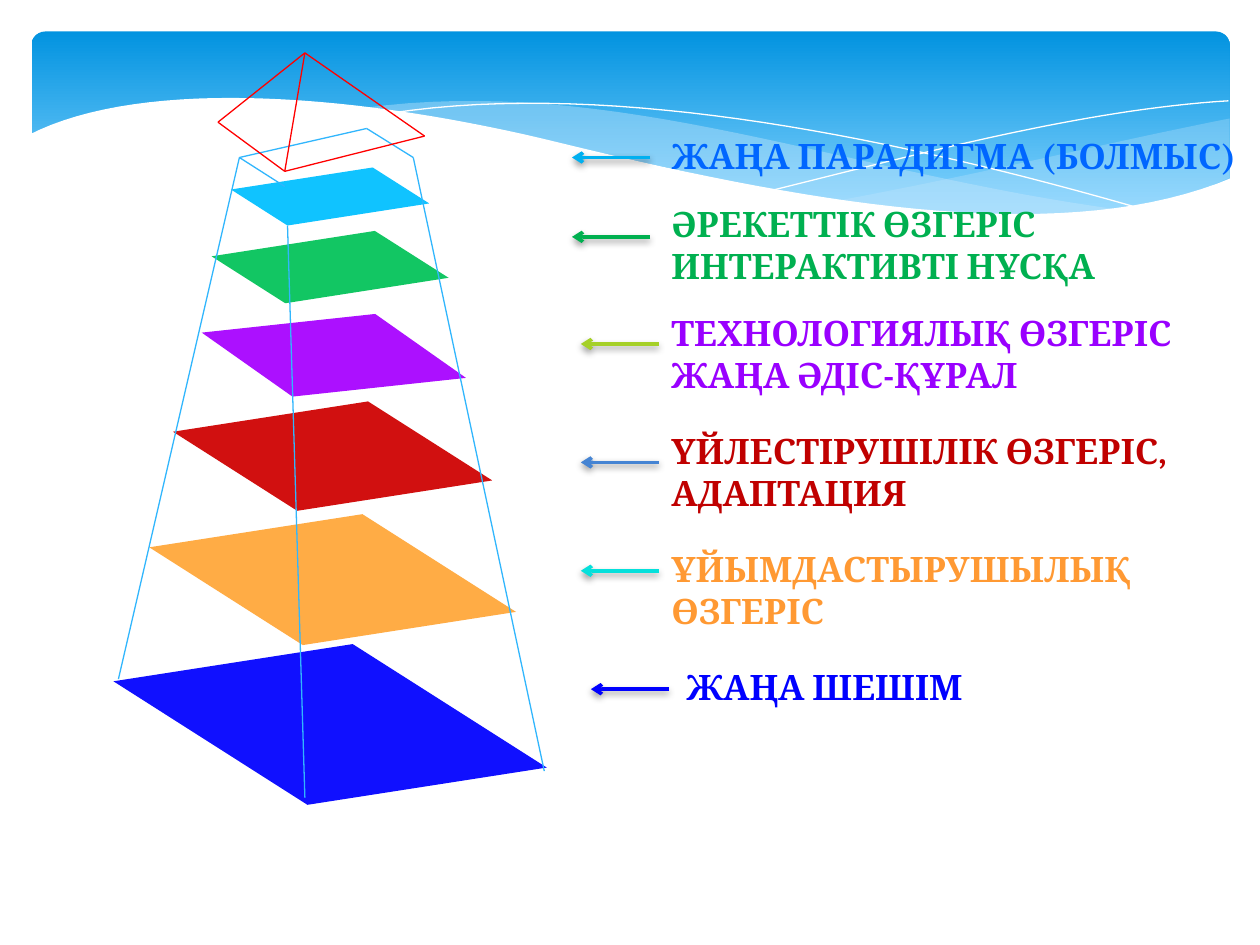
from dataclasses import dataclass
from math import cos, radians, sin

from lxml.etree import SubElement
from pptx import Presentation
from pptx.dml.color import RGBColor
from pptx.enum.shapes import MSO_CONNECTOR, MSO_SHAPE
from pptx.enum.text import PP_ALIGN
from pptx.oxml.ns import qn
from pptx.util import Inches, Pt

ACROSS = (0.9, -0.14)
DEPTH = (0.44, 0.28)
LINE_HEIGHT = 0.33
LABEL_PADDING = 0.11
ARROW_LENGTH = 0.62


@dataclass
class Level:
    """One level of change: its plane in the pyramid, its label and its arrow."""
    text: str
    text_color: str
    label_left: float
    label_top: float
    label_width: float
    arrow_color: str
    arrow_left: float
    arrow_top: float
    plane_color: str
    plane_center: tuple
    plane_width: float
    plane_depth: float
    plane_turn: float = 0


LEVELS = [
    Level("ЖАҢА ПАРАДИГМА (БОЛМЫС)", "0066FF", 0, 0, 4.86,
          "00B0F0", 0.02, 0.23, "10C3FF", (1.72, 1.14), 1.25, 1.02),
    Level("ӘРЕКЕТТІК ӨЗГЕРІС\nИНТЕРАКТИВТІ НҰСҚА", "00B050", 0.09, 0.54, 3.66,
          "00B050", 0.02, 0.86, "12C663", (1.72, 1.7), 1.44, 1.33),
    Level("ТЕХНОЛОГИЯЛЫҚ ӨЗГЕРІС\nЖАҢА ӘДІС-ҚҰРАЛ", "9900FF", 0.09, 1.4, 4.3,
          "A5D028", 0.09, 1.71, "AC10FF", (1.75, 2.4), 1.52, 1.69, 2.7),
    Level("ҮЙЛЕСТІРУШІЛІК ӨЗГЕРІС,\nАДАПТАЦИЯ", "C00000", 0.09, 2.34, 4.25,
          "4584D3", 0.09, 2.65, "D11010", (1.74, 3.2), 1.72, 2.24),
    Level("ҰЙЫМДАСТЫРУШЫЛЫҚ\nӨЗГЕРІС", "FF9933", 0.09, 3.28, 3.96,
          "05E0DB", 0.09, 3.51, "FFAC45", (1.74, 4.18), 1.88, 2.77),
    Level("ЖАҢА ШЕШІМ", "0000FF", 0.17, 4.21, 2.47,
          "0000FF", 0.17, 4.45, "1010FF", (1.72, 5.33), 2.11, 3.5),
]


def color(hex_code):
    """Turn a hex string into a colour."""
    return RGBColor.from_string(hex_code)


def bezier(start, pull_start, pull_end, end, steps=32):
    """Return points along a cubic curve."""
    return [tuple((1 - t) ** 3 * a + 3 * (1 - t) ** 2 * t * b + 3 * (1 - t) * t ** 2 * c + t ** 3 * d
                  for a, b, c, d in zip(start, pull_start, pull_end, end))
            for t in (step / steps for step in range(steps + 1))]


def add_outline(slide, origin, points, fill=None, opacity=100, line=None):
    """Draw a filled polygon, or an open path when there is no fill."""
    corners = [(Inches(origin[0] + x), Inches(origin[1] + y)) for x, y in points]
    builder = slide.shapes.build_freeform(*corners[0])
    builder.add_line_segments(corners[1:], close=fill is not None)
    outline = builder.convert_to_shape()
    outline.shadow.inherit = False
    if fill:
        outline.fill.solid()
        outline.fill.fore_color.rgb = color(fill)
        tint = outline.fill._xPr.find(qn("a:solidFill"))[0]
        SubElement(tint, qn("a:alpha"), val=str(opacity * 1000))
    else:
        outline.fill.background()
    if line:
        outline.line.color.rgb = color(line)
        outline.line.width = Pt(0)
    else:
        outline.line.fill.background()


def add_edge(slide, origin, start, end, hex_code, width=0.75):
    """Draw a straight line and return it with its effect list."""
    (left, top), (x1, y1), (x2, y2) = origin, start, end
    edge = slide.shapes.add_connector(
        MSO_CONNECTOR.STRAIGHT,
        Inches(left + x1), Inches(top + y1), Inches(left + x2), Inches(top + y2))
    edge.line.color.rgb = color(hex_code)
    edge.line.width = Pt(width)
    return edge, SubElement(edge._element.spPr, qn("a:effectLst"))


def add_banner(slide, left, top, width, height):
    """Draw the blue banner, its two pale waves, two strands and the white lower wave."""
    banner = slide.shapes.add_shape(
        MSO_SHAPE.ROUNDED_RECTANGLE, Inches(left), Inches(top), Inches(width), Inches(height))
    banner.adjustments[0] = 0.07
    banner.shadow.inherit = False
    banner.line.fill.background()
    banner.fill.gradient()
    banner.fill.gradient_angle = 270
    for stop, hex_code, position in zip(banner.fill.gradient_stops, ("0293E0", "83D3FE"), (0, 0.9)):
        stop.color.rgb = color(hex_code)
        stop.position = position

    origin = (left, top)
    right_start, right_end = (width, 0.69), (6.36, 1.35)
    right_wave = (bezier(right_start, (8.45, 0.9), (7.55, 1.13), right_end)
                  + bezier(right_end, (7.5, 1.51), (8.6, 1.57), (width, 1.16)))
    broad_start, broad_end = (8.68, 1.42), (2.61, 0.61)
    broad_wave = (bezier(broad_start, (6.45, 1.13), (4.65, 0.33), broad_end)
                  + bezier(broad_end, (4.65, 0.85), (6.65, 1.7), broad_start))
    long_strand = bezier((2.84, 0.65), (4.65, 0.37), (6.95, 0.87), (8.82, 1.41))
    short_strand = bezier((5.88, 1.26), (7.05, 0.97), (8.35, 0.62), (9.5, 0.55))
    margin, floor, crossing = 0.02, 1.99, (4.22, 0.89)
    lower_wave = (bezier((width + margin, 1.16), (8.25, 1.7), (6.35, 1.41), crossing)
                  + bezier(crossing, (2.65, 0.5), (0.9, 0.35), (-margin, 0.82))
                  + [(-margin, floor), (width + margin, floor)])

    add_outline(slide, origin, right_wave, "C6E7FC", 29)
    add_outline(slide, origin, broad_wave, "C6E7FC", 40)
    for strand in (long_strand, short_strand):
        add_outline(slide, origin, strand, line="FFFFFF")
    add_outline(slide, origin, lower_wave, "FFFFFF")


def plane_corners(level):
    """Project a level's flat rectangle: left, back, right and front corner."""
    turn = radians(level.plane_turn)

    def half_side(direction, length):
        """Turn one side's direction and scale it to half its length."""
        x, y = direction
        return ((x * cos(turn) - y * sin(turn)) * length / 2,
                (x * sin(turn) + y * cos(turn)) * length / 2)

    ax, ay = half_side(ACROSS, level.plane_width)
    dx, dy = half_side(DEPTH, level.plane_depth)
    x, y = level.plane_center
    return [(x + i * ax + j * dx, y + i * ay + j * dy)
            for i, j in ((-1, -1), (1, -1), (1, 1), (-1, 1))]


def add_pyramid(slide, left, top):
    """Draw the planes, the blue frame around them and the red tip above."""
    origin = (left, top)
    for level in LEVELS:
        add_outline(slide, origin, plane_corners(level), level.plane_color)

    head_left, head_back, head_right, head_front = (1, 0.83), (2.01, 0.6), (2.38, 0.83), (1.36, 1.06)
    foot_left, foot_right, foot_front = (0.04, 4.97), (3.42, 5.7), (1.52, 5.91)
    top_plane_front = plane_corners(LEVELS[0])[3]
    legs = [(head_left, foot_left), (head_right, foot_right), (top_plane_front, foot_front)]
    rim = [(head_front, head_left), (head_left, head_back), (head_back, head_right)]
    for start, end in legs + rim:
        add_edge(slide, origin, start, end, "31B6FD")

    apex, tip_left, tip_front, tip_right = (1.52, 0), (0.83, 0.55), (1.36, 0.94), (2.47, 0.66)
    slopes = [(apex, corner) for corner in (tip_left, tip_front, tip_right)]
    base = [(tip_front, corner) for corner in (tip_left, tip_right)]
    for start, end in slopes + base:
        add_edge(slide, origin, start, end, "FF0000")


def add_label(slide, left, top, level):
    """Write a level's label."""
    lines = level.text.count("\n") + 1
    label = slide.shapes.add_textbox(
        Inches(left + level.label_left), Inches(top + level.label_top),
        Inches(level.label_width), Inches(lines * LINE_HEIGHT + LABEL_PADDING))
    label.text_frame.word_wrap = False
    label.text_frame.text = level.text
    for paragraph in label.text_frame.paragraphs:
        paragraph.alignment = PP_ALIGN.CENTER if lines == 1 else PP_ALIGN.LEFT
        font = paragraph.runs[0].font
        font.name, font.size, font.bold = "Cambria", Pt(20), True
        font.color.rgb = color(level.text_color)


def add_arrow(slide, left, top, level):
    """Draw a level's shadowed arrow towards the pyramid."""
    start = (level.arrow_left, level.arrow_top)
    end = (level.arrow_left - ARROW_LENGTH, level.arrow_top)
    arrow, effects = add_edge(slide, (left, top), start, end, level.arrow_color, 2)
    SubElement(arrow.line._get_or_add_ln(), qn("a:tailEnd"), type="arrow")
    shadow = SubElement(effects, qn("a:outerShdw"), blurRad=str(Pt(4)), dist=str(Pt(2)),
                        dir="5400000", rotWithShape="0")
    black = SubElement(shadow, qn("a:srgbClr"), val="000000")
    SubElement(black, qn("a:alpha"), val="38000")


def main():
    """Build the slide and save it."""
    presentation = Presentation()
    presentation.slide_width, presentation.slide_height = Inches(10), Inches(7.5)
    slide = presentation.slides.add_slide(presentation.slide_layouts[6])
    add_banner(slide, 0.25, 0.25, 9.51, 1.56)
    for add_part in (add_label, add_arrow):
        for level in LEVELS:
            add_part(slide, 5.14, 1.02, level)
    add_pyramid(slide, 0.9, 0.42)
    presentation.save("out.pptx")


if __name__ == "__main__":
    main()
